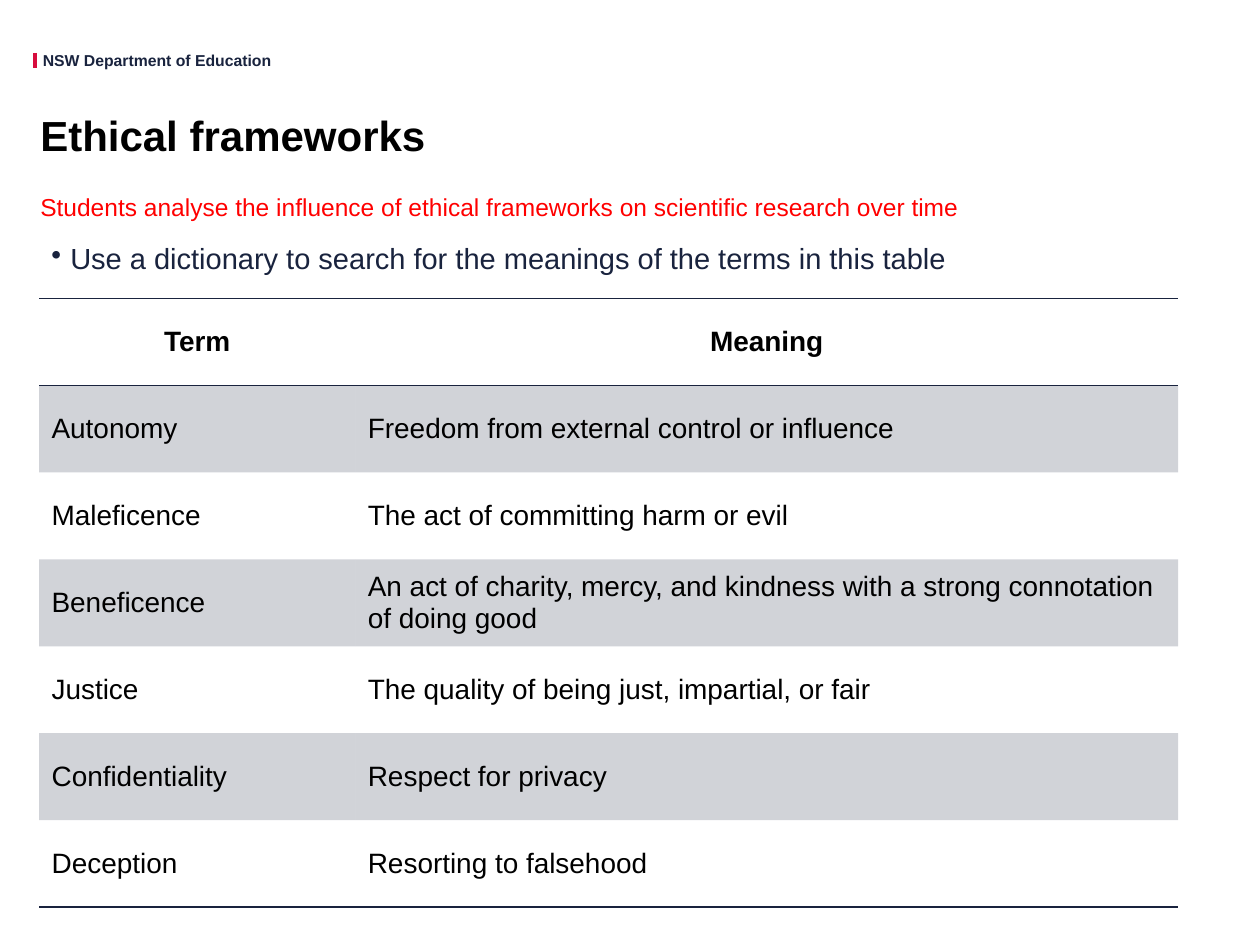
import pptx
import pptx.dml.color
import pptx.enum.shapes
import pptx.enum.text
import pptx.oxml.ns
import pptx.util
from lxml import etree
from pptx.util import Inches

NAVY = "19233E"
ANCHOR = pptx.enum.text.MSO_ANCHOR
qn = pptx.oxml.ns.qn


def color(value):
    return pptx.dml.color.RGBColor.from_string(value)


def write_text(frame, text, font, frame_format={}, paragraph_format={}, bullet=None):
    """Write one paragraph with the given frame, paragraph and font formats."""
    for name, value in frame_format.items():
        setattr(frame, name, value)
    paragraph = frame.paragraphs[0]
    for name, value in paragraph_format.items():
        setattr(paragraph, name, value)
    if bullet:
        properties = paragraph._p.get_or_add_pPr()
        properties.set("marL", str(Inches(0.15)))
        properties.set("indent", str(Inches(-0.15)))
        etree.SubElement(properties, qn("a:buChar"), char=bullet)
    run = paragraph.add_run()
    run.text = text
    size, hex_color, bold = font
    values = {"name": "Arial", "size": pptx.util.Pt(size), "bold": bold}
    for name, value in values.items():
        setattr(run.font, name, value)
    run.font.color.rgb = color(hex_color)


presentation = pptx.Presentation()
presentation.slide_width = Inches(10)
presentation.slide_height = Inches(7.5)
slide = presentation.slides.add_slide(presentation.slide_layouts[6])

# Red bar beside the department name
bar = slide.shapes.add_connector(
    pptx.enum.shapes.MSO_CONNECTOR.STRAIGHT,
    Inches(0.28), Inches(0.42), Inches(0.28), Inches(0.54))
bar.line.color.rgb = color("D70C3D")
bar.line.width = pptx.util.Pt(2.5)
etree.SubElement(bar._element.spPr, qn("a:effectLst"))

# Department name, title, outcome and instruction
no_margins = {"margin_left": 0, "margin_top": 0, "margin_right": 0, "margin_bottom": 0}
space_after = pptx.util.Pt(4.5)
text_boxes = [
    ((0.34, 0.4, 1.83, 0.15), "NSW Department of Education", (9, NAVY, True),
     {**no_margins, "word_wrap": False,
      "auto_size": pptx.enum.text.MSO_AUTO_SIZE.SHAPE_TO_FIT_TEXT}, {}, None),
    ((0.32, 0.82, 9.43, 0.55), "Ethical frameworks", (24, "000000", True),
     {**no_margins, "word_wrap": True, "vertical_anchor": ANCHOR.MIDDLE},
     {"line_spacing": 0.9}, None),
    ((0.32, 1.36, 9.44, 0.46),
     "Students analyse the influence of ethical frameworks on scientific research over time",
     (14, "FF0000", False), {"word_wrap": True, "margin_left": 0},
     {"line_spacing": 1.5, "space_after": space_after}, None),
    ((0.31, 1.78, 9.44, 0.48),
     "Use a dictionary to search for the meanings of the terms in this table",
     (16.6, NAVY, False), {"word_wrap": True},
     {"line_spacing": 1.3, "space_after": space_after}, "•"),
]
for position, text, font, frame_format, paragraph_format, bullet in text_boxes:
    box = slide.shapes.add_textbox(*[Inches(length) for length in position])
    write_text(box.text_frame, text, font, frame_format, paragraph_format, bullet)

# Table of terms
rows = [
    ("Term", "Meaning"),
    ("Autonomy", "Freedom from external control or influence"),
    ("Maleficence", "The act of committing harm or evil"),
    ("Beneficence",
     "An act of charity, mercy, and kindness with a strong connotation of doing good"),
    ("Justice", "The quality of being just, impartial, or fair"),
    ("Confidentiality", "Respect for privacy"),
    ("Deception", "Resorting to falsehood"),
]
table = slide.shapes.add_table(
    len(rows), 2, Inches(0.31), Inches(2.37), Inches(9.03), Inches(4.83)).table
table.first_row = False
table.horz_banding = False
# Plain style without grid lines
table._tbl.tblPr.find(qn("a:tableStyleId")).text = "{2D5ABB26-0587-4C30-8999-92F81FD0307C}"
for column, width in zip(table.columns, (2.51, 6.53)):
    column.width = Inches(width)

borders = {0: ("a:lnT", "a:lnB"), len(rows) - 1: ("a:lnB",)}
for row_index, texts in enumerate(rows):
    table.rows[row_index].height = Inches(0.69)
    is_header = row_index == 0
    alignment = pptx.enum.text.PP_ALIGN.CENTER if is_header else pptx.enum.text.PP_ALIGN.LEFT
    for column_index, text in enumerate(texts):
        cell = table.cell(row_index, column_index)
        cell.vertical_anchor = ANCHOR.MIDDLE
        write_text(cell.text_frame, text, (16, "000000", is_header),
                   paragraph_format={"alignment": alignment})

        # Rules around the header and below the last row
        cell_properties = cell._tc.get_or_add_tcPr()
        for side in borders.get(row_index, ()):
            border = etree.SubElement(cell_properties, qn(side), w=str(pptx.util.Pt(1)))
            border_fill = etree.SubElement(border, qn("a:solidFill"))
            etree.SubElement(border_fill, qn("a:srgbClr"), val=NAVY)

        # Every other row is shaded with 20 % navy
        if row_index % 2:
            cell.fill.solid()
            cell.fill.fore_color.rgb = color(NAVY)
            shade = cell_properties.find(qn("a:solidFill")).find(qn("a:srgbClr"))
            etree.SubElement(shade, qn("a:alpha"), val="20000")
        else:
            cell.fill.background()

presentation.save("out.pptx")
